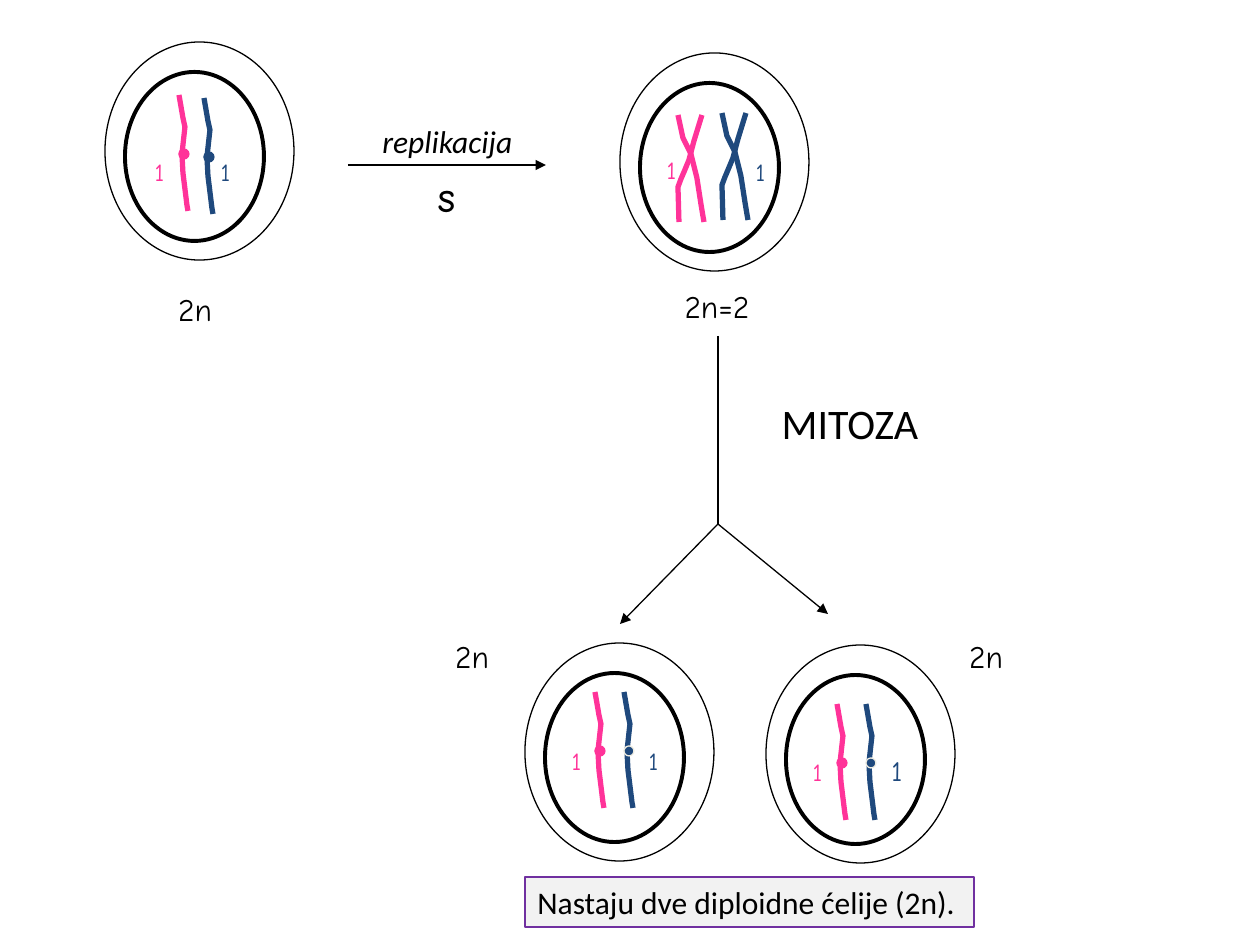
from dataclasses import dataclass

from lxml import etree
from pptx import Presentation
from pptx import util as u
from pptx.dml.color import RGBColor
from pptx.enum import shapes, text
from pptx.oxml.ns import qn

PX = 914400 / 126  # EMU per px
BLACK, PINK, BLUE, CREAM = "000000", "FF3399", "1F497D", "EEECE1"
BODY, HAND = "Calibri", "Comic Neue"

# Strand outlines in px from their top left corner
SINGLE = [(0, 0), (4, 23), (6, 32), (3, 59), (4, 78), (6, 94), (8, 110), (9, 116)]
FALLING = [(0, 0), (5, 23), (13, 39), (19, 63), (23, 89), (26, 107)]
RISING = [(24, 0), (16, 26), (11, 45), (6, 57), (3, 64), (0, 72), (1, 107)]


@dataclass
class Chromosome:
    x: int
    y: int
    color: str
    dot_line: str = ""  # centromere outline, if not the strand colour


@dataclass
class Label:
    words: str
    x: int
    y: int
    w: int
    h: int
    size: int = 18
    font: str = HAND
    color: str = BLACK
    bold: bool = False
    italic: bool = False
    wrap: bool = False


CELLS = [(105, 42), (620, 53), (766, 645), (525, 643)]

SINGLES = [
    Chromosome(179, 95, PINK), Chromosome(204, 98, BLUE),
    Chromosome(595, 692, PINK), Chromosome(837, 704, PINK),
    Chromosome(624, 692, BLUE, CREAM), Chromosome(866, 704, BLUE, CREAM),
]

DOUBLES = [Chromosome(678, 115, PINK), Chromosome(722, 113, BLUE)]

# from x, from y, to x, to y, arrowhead
LINES = [
    (348, 165, 546, 165, True), (718, 336, 718, 524, False),
    (718, 524, 828, 614, True), (718, 524, 620, 624, True),
]

LABELS = [
    Label("replikacija", 348, 116, 199, 50, font=BODY, italic=True, wrap=True),
    Label("S", 407, 175, 79, 50, bold=True, wrap=True),
    Label("MITOZA", 740, 391, 220, 63, size=24, font=BODY, wrap=True),
    Label("2n", 136, 284, 118, 50, wrap=True),
    Label("2n=2", 669, 281, 96, 50),
    Label("2n", 441, 631, 62, 50),
    Label("2n", 955, 631, 62, 50),
    Label("1", 135, 151, 49, 42, size=14, color=PINK, wrap=True),
    Label("1", 207, 151, 37, 42, size=14, color=BLUE),
    Label("1", 653, 149, 37, 42, size=14, color=PINK),
    Label("1", 742, 151, 37, 42, size=14, color=BLUE),
    Label("1", 558, 740, 37, 42, size=14, color=PINK),
    Label("1", 799, 751, 37, 42, size=14, color=PINK),
    Label("1", 635, 740, 37, 42, size=14, color=BLUE),
    Label("1", 878, 747, 38, 47, size=16, color=BLUE),
]


def emu(*lengths: int) -> list[int]:
    return [round(n * PX) for n in lengths]


def rgb(color: str) -> RGBColor:
    return RGBColor.from_string(color)


def paint(sp, line: str, width: float = 0.75, fill: str = "") -> None:
    sp.shadow.inherit = False
    if fill:
        sp.fill.solid()
        sp.fill.fore_color.rgb = rgb(fill)
    else:
        sp.fill.background()
    sp.line.color.rgb = rgb(line)
    sp.line.width = u.Pt(width)


def write(sp, words: str, *, size: int = 18, font: str = BODY, color: str = BLACK,
          bold: bool = False, italic: bool = False, wrap: bool = False,
          align=text.PP_ALIGN.CENTER) -> None:
    tf = sp.text_frame
    tf.word_wrap = wrap
    tf.auto_size = text.MSO_AUTO_SIZE.SHAPE_TO_FIT_TEXT
    tf.vertical_anchor = text.MSO_ANCHOR.TOP
    p = tf.paragraphs[0]
    p.alignment = align
    r = p.add_run()
    r.text = words
    r.font.size, r.font.name = u.Pt(size), font
    r.font.bold, r.font.italic = bold, italic
    r.font.color.rgb = rgb(color)


def add_oval(s, x: int, y: int, w: int, h: int, **look) -> None:
    paint(s.shapes.add_shape(shapes.MSO_SHAPE.OVAL, *emu(x, y, w, h)), **look)


def add_cell(s, x: int, y: int) -> None:
    add_oval(s, x, y, 189, 218, line=BLACK)
    add_oval(s, x + 20, y + 30, 139, 169, line=BLACK, width=2.25)


def add_line(s, x1: int, y1: int, x2: int, y2: int, arrow: bool) -> None:
    ln = s.shapes.add_connector(shapes.MSO_CONNECTOR.STRAIGHT, *emu(x1, y1, x2, y2))
    ln.line.color.rgb = rgb(BLACK)
    ln.line.width = u.Pt(0.75)
    if arrow:
        etree.SubElement(ln.line._get_or_add_ln(), qn("a:tailEnd"), type="triangle")
    etree.SubElement(ln._element.spPr, qn("a:effectLst"))


def add_strand(s, c: Chromosome, outline: list[tuple[int, int]]) -> None:
    start, *rest = [emu(c.x + dx, c.y + dy) for dx, dy in outline]
    fb = s.shapes.build_freeform(*start)
    fb.add_line_segments(rest, close=False)
    paint(fb.convert_to_shape(), c.color, 3)


def add_label(s, label: Label) -> None:
    sp = s.shapes.add_textbox(*emu(label.x, label.y, label.w, label.h))
    write(sp, label.words, size=label.size, font=label.font, color=label.color,
          bold=label.bold, italic=label.italic, wrap=label.wrap)


def main() -> None:
    prs = Presentation()
    prs.slide_width, prs.slide_height = u.Inches(10), u.Inches(7.5)
    s = prs.slides.add_slide(prs.slide_layouts[6])

    # Cells and the arrows between them
    for x, y in CELLS:
        add_cell(s, x, y)
    for line in LINES:
        add_line(s, *line)

    # Chromosomes before and after replication
    for c in SINGLES:
        add_strand(s, c, SINGLE)
        add_oval(s, c.x, c.y + 54, 10, 10, line=c.dot_line or c.color, fill=c.color)
    for c in DOUBLES:
        for outline in (FALLING, RISING):
            add_strand(s, c, outline)

    # Labels and the conclusion
    for label in LABELS:
        add_label(s, label)
    box = s.shapes.add_shape(shapes.MSO_SHAPE.RECTANGLE, *emu(525, 877, 449, 50))
    paint(box, "7030A0", fill="F2F2F2")
    write(box, "Nastaju dve diploidne ćelije (2n).", align=text.PP_ALIGN.LEFT)

    prs.save("out.pptx")


if __name__ == "__main__":
    main()
